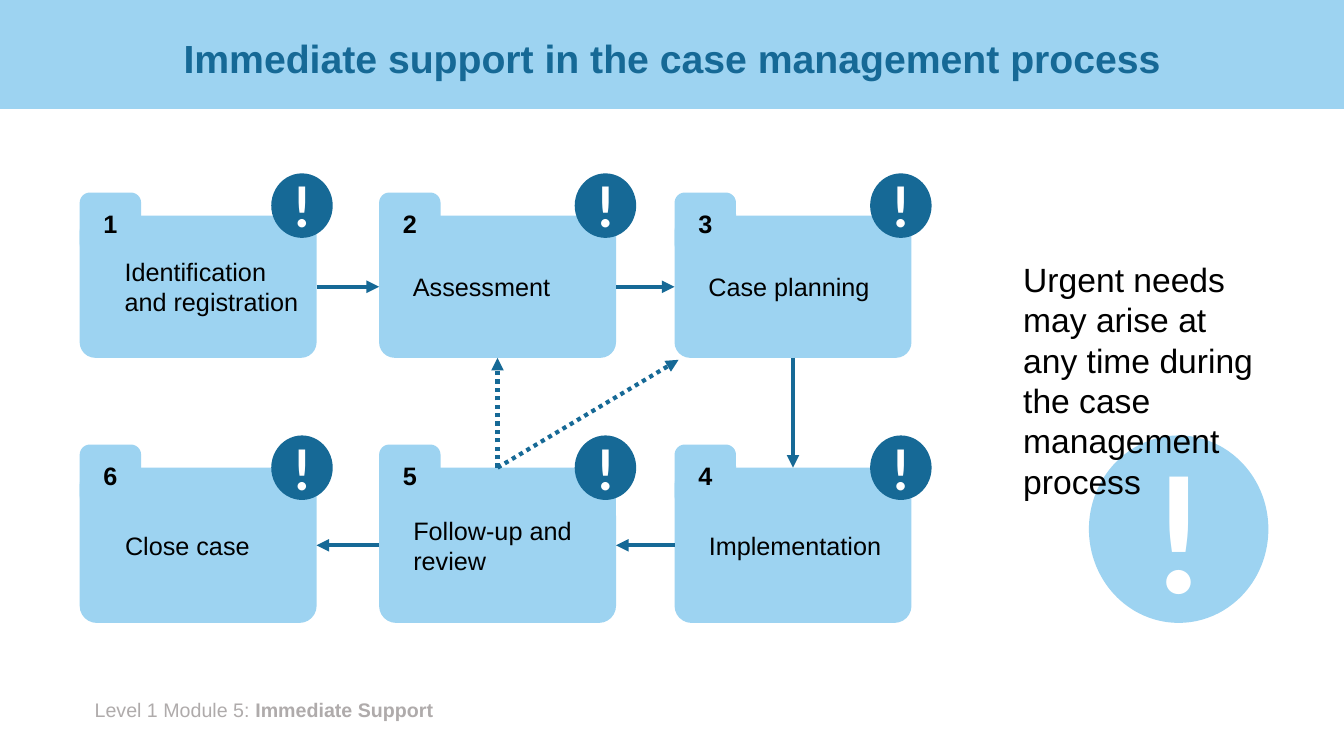
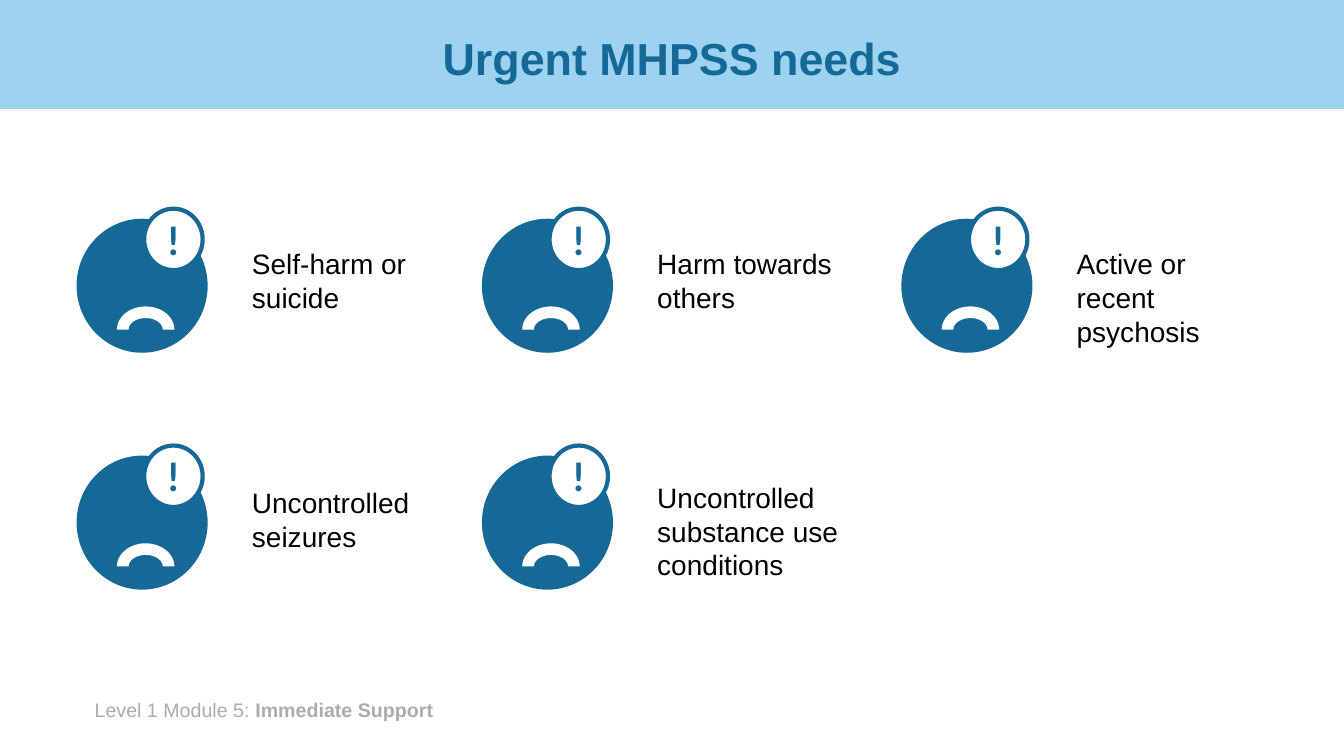
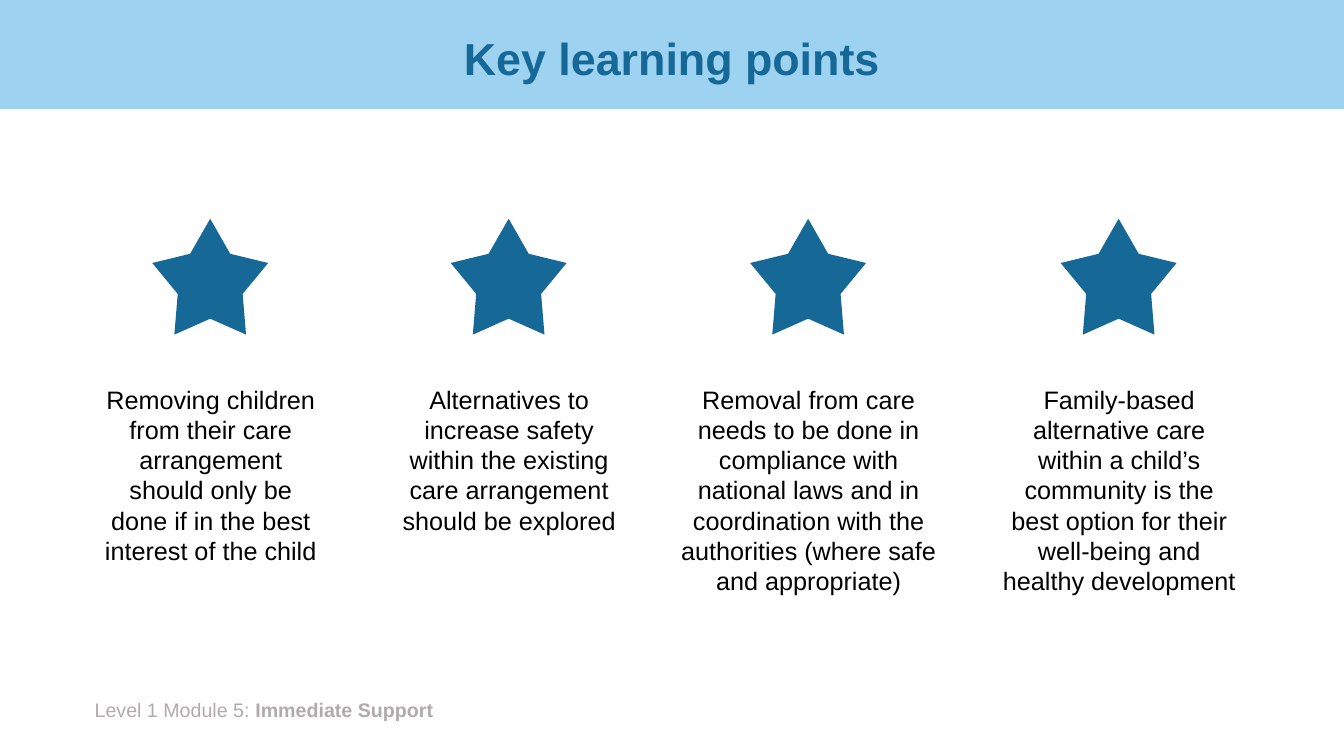
from dataclasses import dataclass

from lxml.etree import SubElement
from pptx import Presentation
from pptx.dml.color import RGBColor
from pptx.enum.dml import MSO_LINE
from pptx.enum.shapes import MSO_CONNECTOR, MSO_SHAPE
from pptx.enum.text import MSO_ANCHOR, MSO_AUTO_SIZE, PP_ALIGN
from pptx.oxml.ns import qn
from pptx.util import Inches, Pt


@dataclass(frozen=True)
class Theme:
    """Colours, fonts and type sizes of the deck."""
    pale: RGBColor = RGBColor(0x9D, 0xD3, 0xF1)
    deep: RGBColor = RGBColor(0x16, 0x69, 0x96)
    grey: RGBColor = RGBColor(0xAF, 0xAB, 0xAB)
    black: RGBColor = RGBColor(0, 0, 0)
    white: RGBColor = RGBColor(255, 255, 255)
    font: str = "Arial"
    mark_font: str = "Lato"
    title: int = 32
    long_title: int = 28
    callout: int = 24
    need: int = 20
    label: int = 18
    footer: int = 14
    big_mark: int = 115
    badge_mark: int = 40
    small_mark: int = 28
    line: int = 3


THEME = Theme()
WIDTH, HEIGHT = 13.33, 7.5
TOP, LEFT, BOTTOM, RIGHT = range(4)  # connection sites of a rectangle


class Builder:
    """Holds the deck, its style and the current page."""

    def __init__(self, theme):
        self.theme = theme
        self.deck = Presentation()
        self.deck.slide_width, self.deck.slide_height = Inches(WIDTH), Inches(HEIGHT)
        self.layout = self.deck.slide_layouts[5]
        self.page = None

    # Pages and what they share
    def new_page(self, title, size, margin=0.92):
        first = self.page is None
        self.page = self.deck.slides.add_slide(self.layout)
        if first:
            self.furnish_layout()
        box = self.page.shapes.title
        box.left, box.top = Inches(margin), Inches(0.13)
        box.width, box.height = Inches(WIDTH - 2 * margin), Inches(0.95)
        frame = box.text_frame
        frame.auto_size = MSO_AUTO_SIZE.NONE
        frame.vertical_anchor = MSO_ANCHOR.MIDDLE
        para = frame.paragraphs[0]
        para.line_spacing = 0.9
        para.alignment = PP_ALIGN.CENTER
        self.span(para, title, size, self.theme.deep, bold=True)

    def furnish_layout(self):
        """Put the band and the footer on the layout, behind the title."""
        for holder in list(self.layout.placeholders)[1:]:
            holder.element.getparent().remove(holder.element)
        band = self.shape(MSO_SHAPE.RECTANGLE, 0, 0, WIDTH, 1.08, self.theme.pale)
        footer = self.text("Level 1 Module 5: ", 0.84, 6.87, 4.55, 0.34,
                           self.theme.footer, self.theme.grey)
        self.span(footer.text_frame.paragraphs[0], "Immediate Support",
                  self.theme.footer, self.theme.grey, bold=True)
        for place, item in enumerate((band, footer), start=2):
            self.layout.shapes.element.insert(place, item.element)

    # Basic elements
    def span(self, para, words, size, color, bold=False, font=None):
        run = para.add_run()
        run.text = words
        run.font.name = font or self.theme.font
        run.font.size, run.font.bold = Pt(size), bold
        run.font.color.rgb = color

    def text(self, words, left, top, width, height, size, color=None,
             align=PP_ALIGN.LEFT):
        box = self.page.shapes.add_textbox(Inches(left), Inches(top),
                                           Inches(width), Inches(height))
        box.text_frame.word_wrap = True
        box.text_frame.auto_size = MSO_AUTO_SIZE.SHAPE_TO_FIT_TEXT
        para = box.text_frame.paragraphs[0]
        para.alignment = align
        self.span(para, words, size, color or self.theme.black)
        return box

    def shape(self, kind, left, top, width, height, fill, outline=None, parent=None):
        shapes = (parent or self.page).shapes
        item = shapes.add_shape(kind, Inches(left), Inches(top),
                                Inches(width), Inches(height))
        item.shadow.inherit = False
        item.fill.solid()
        item.fill.fore_color.rgb = fill
        if outline is None:
            item.line.fill.background()
        else:
            item.line.color.rgb = outline
            item.line.width = Pt(self.theme.line)
        return item

    def label(self, item, words, align, indent=0.0, **style):
        frame = item.text_frame
        frame.vertical_anchor = MSO_ANCHOR.MIDDLE
        frame.margin_left = Inches(0.1 + indent)
        frame.paragraphs[0].alignment = align
        self.span(frame.paragraphs[0], words, **style)

    def arrow(self, start, start_site, end, end_site=None, dotted=False):
        """Arrow from a shape to another shape's site, or to a point."""
        point = (0, 0) if end_site is not None else end
        line = self.page.shapes.add_connector(
            MSO_CONNECTOR.STRAIGHT, 0, 0, Inches(point[0]), Inches(point[1]))
        line.begin_connect(start, start_site)
        if end_site is not None:
            line.end_connect(end, end_site)
        line.line.color.rgb = self.theme.deep
        line.line.width = Pt(self.theme.line)
        if dotted:
            line.line.dash_style = MSO_LINE.ROUND_DOT
        outline = line.element.find(".//" + qn("a:ln"))
        SubElement(outline, qn("a:tailEnd")).set("type", "triangle")
        SubElement(outline.getparent(), qn("a:effectLst"))

    # Composed elements
    def alert(self, left, top, width, height, size, fill, color,
              outline=None, parent=None):
        """Circle with an exclamation mark."""
        circle = self.shape(MSO_SHAPE.OVAL, left, top, width, height,
                            fill, outline, parent)
        self.label(circle, "!", PP_ALIGN.CENTER, size=size, color=color,
                   bold=True, font=self.theme.mark_font)

    def folder(self, number, words, left, top, height, indent):
        style = dict(size=self.theme.label, color=self.theme.black)
        body = self.shape(MSO_SHAPE.ROUNDED_RECTANGLE, left, top, 2.35, height,
                          self.theme.pale)
        body.adjustments[0] = 0.11
        self.label(body, words, PP_ALIGN.LEFT, indent, **style)
        tab = self.shape(MSO_SHAPE.ROUNDED_RECTANGLE, left, top - 0.23, 0.61, 0.61,
                         self.theme.pale)
        self.label(tab, str(number), PP_ALIGN.CENTER, bold=True, **style)
        return body

    def sad_face(self, left, top):
        theme = self.theme
        group = self.page.shapes.add_group_shape()
        self.shape(MSO_SHAPE.OVAL, left, top, 1.3, 1.33, theme.deep, parent=group)
        self.shape(MSO_SHAPE.BLOCK_ARC, left + 0.4, top + 0.87, 0.57, 0.46,
                   theme.white, parent=group)
        self.alert(left + 0.67, top - 0.1, 0.58, 0.61, theme.small_mark,
                   theme.white, theme.deep, theme.deep, group)

    def star_point(self, words, center, width, height):
        star = self.shape(MSO_SHAPE.STAR_5_POINT, center - 0.58, 2.17, 1.15, 1.15,
                          self.theme.deep)
        star.adjustments[0] = 0.28
        self.text(words, center - width / 2, 3.76, width, height,
                  self.theme.label, align=PP_ALIGN.CENTER)


def process_page(build):
    theme = build.theme
    build.new_page("Immediate support in the case management process",
                   theme.long_title, margin=0)
    build.alert(10.8, 4.32, 1.78, 1.86, theme.big_mark, theme.pale, theme.white)
    build.text("Urgent needs may arise at any time during the case management process",
               10.05, 2.52, 2.62, 2.52, theme.callout)

    # Folders: columns as (left, text indent, badge left), rows as (top, height, badge top)
    columns = [(0.79, 0.3, 2.69), (3.76, 0.19, 5.7), (6.69, 0.19, 8.63)]
    rows = [(2.14, 1.41, 1.72), (4.64, 1.54, 4.32)]
    steps = [[(1, "Identification and registration"), (2, "Assessment"),
              (3, "Case planning")],
             [(6, "Close case"), (5, "Follow-up and review"), (4, "Implementation")]]
    folders = {}
    for (top, height, _), row in zip(rows, steps):
        for (left, indent, _), (number, words) in zip(columns, row):
            folders[number] = build.folder(number, words, left, top, height, indent)

    # Flow between the steps
    for start, start_site, end, end_site in [
            (1, RIGHT, 2, LEFT), (2, RIGHT, 3, LEFT), (3, BOTTOM, 4, TOP),
            (4, LEFT, 5, RIGHT), (5, LEFT, 6, RIGHT)]:
        build.arrow(folders[start], start_site, folders[end], end_site)
    build.arrow(folders[5], TOP, folders[2], BOTTOM, dotted=True)
    build.arrow(folders[5], TOP, (6.73, 3.57), dotted=True)

    # Alert badges
    for _, _, top in rows:
        for _, _, left in columns:
            build.alert(left, top, 0.61, 0.64, theme.badge_mark,
                        theme.deep, theme.white)


def needs_page(build):
    build.new_page("Urgent MHPSS needs", build.theme.title)
    columns, rows = (0.76, 4.78, 8.94), (2.17, 4.52)
    # Needs: words, column, row, text top, text width, text height
    for words, column, row, text_top, width, height in [
            ("Self-harm or suicide", 0, 0, 2.4, 2.25, 0.77),
            ("Harm towards others", 1, 0, 2.4, 2.25, 0.77),
            ("Active or recent psychosis", 2, 0, 2.4, 1.86, 1.11),
            ("Uncontrolled seizures", 0, 1, 4.77, 2.25, 0.77),
            ("Uncontrolled substance use conditions", 1, 1, 4.72, 2.25, 1.11)]:
        build.sad_face(columns[column], rows[row])
        build.text(words, columns[column] + 1.64, text_top, width, height,
                   build.theme.need)


def learning_page(build):
    build.new_page("Key learning points", build.theme.title)
    # Points: words, centre, text width, text height
    for point in [
            ("Removing children from their care arrangement should only be done "
             "if in the best interest of the child", 2.09, 2.34, 1.92),
            ("Alternatives to increase safety within the existing care arrangement "
             "should be explored", 5.05, 2.34, 1.62),
            ("Removal from care needs to be done in compliance with national laws "
             "and in coordination with the authorities (where safe and appropriate)",
             8.02, 2.8, 2.22),
            ("Family-based alternative care within a child’s community is the best "
             "option for their well-being and healthy development",
             11.1, 2.52, 2.22)]:
        build.star_point(*point)


def main():
    build = Builder(THEME)
    process_page(build)
    needs_page(build)
    learning_page(build)
    build.deck.save("out.pptx")


if __name__ == "__main__":
    main()
